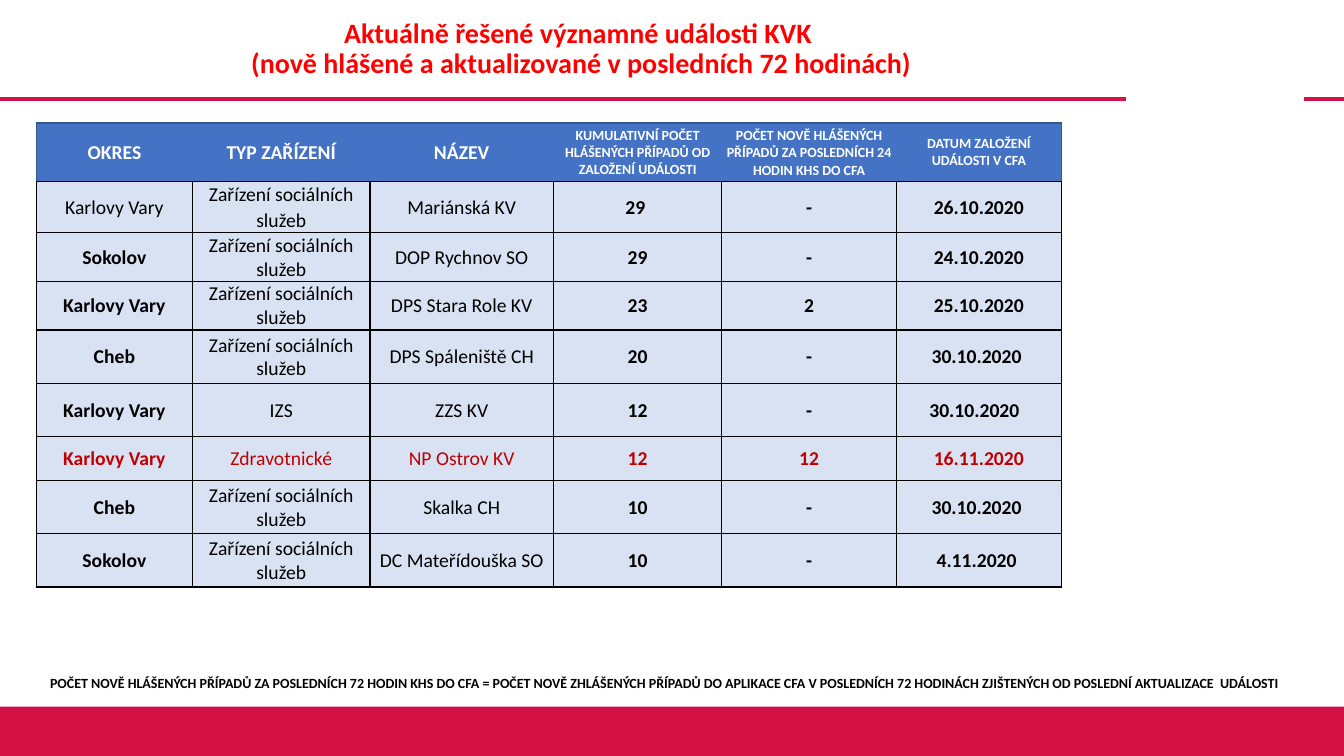
from dataclasses import dataclass

from lxml import etree
from pptx import Presentation
from pptx import util as u
from pptx.dml.color import RGBColor
from pptx.enum import shapes, text
from pptx.oxml.ns import qn

TITLE = ("Aktuálně řešené významné události KVK \v"
         "(nově hlášené a aktualizované v posledních 72 hodinách)")
FOOTNOTE = ("POČET NOVĚ HLÁŠENÝCH PŘÍPADŮ ZA POSLEDNÍCH 72 HODIN KHS DO CFA = "
            "POČET NOVĚ ZHLÁŠENÝCH PŘÍPADŮ DO APLIKACE CFA V POSLEDNÍCH 72 HODINÁCH "
            "ZJIŠTENÝCH OD POSLEDNÍ AKTUALIZACE  UDÁLOSTI")
HEADINGS = ("OKRES", "TYP ZAŘÍZENÍ", "NÁZEV",
            "KUMULATIVNÍ POČET HLÁŠENÝCH PŘÍPADŮ OD ZALOŽENÍ UDÁLOSTI",
            "POČET NOVĚ HLÁŠENÝCH PŘÍPADŮ ZA POSLEDNÍCH 24 HODIN KHS DO CFA",
            "DATUM ZALOŽENÍ UDÁLOSTI V CFA")
SOCIAL = "Zařízení sociálních služeb"
EVENTS = [
    ("Karlovy Vary", SOCIAL, "Mariánská KV", "29 ", "-", "26.10.2020"),
    ("Sokolov", SOCIAL, "DOP Rychnov SO", "29", "-", "24.10.2020"),
    ("Karlovy Vary", SOCIAL, "DPS Stara Role KV", "23", "2", "25.10.2020"),
    ("Cheb", SOCIAL, "DPS Spáleniště CH", "20", "-", "30.10.2020 "),
    ("Karlovy Vary", "IZS", "ZZS KV", "12", "-", "30.10.2020  "),
    ("Karlovy Vary", "Zdravotnické", "NP Ostrov KV", "12", "12", "16.11.2020"),
    ("Cheb", SOCIAL, "Skalka CH", "10", "-", "30.10.2020 "),
    ("Sokolov", SOCIAL, "DC Mateřídouška SO", "10", "-", "4.11.2020 "),
]
HIGHLIGHTED = "NP Ostrov KV"
COLUMN_WIDTHS = (1.55, 1.76, 1.82, 1.67, 1.73, 1.64)
ROW_HEIGHTS = (0.58, 0.43, 0.43, 0.43, 0.53, 0.53, 0.43, 0.53, 0.53)
RULES = ((0, 11.17), (12.93, 13.33))


@dataclass(frozen=True)
class Theme:
    font: str = "Calibri"
    band: str = "D31145"
    title: str = "FF0000"
    header: str = "4472C4"
    header_edge: str = "305983"
    body: str = "D9E2F3"
    ink: str = "000000"
    paper: str = "FFFFFF"
    highlight: str = "C00000"
    title_size: int = 20
    table_size: int = 14
    small_size: int = 10


THEME = Theme()


def write(frame, words, size, color, bold=True, spacing=1.0):
    """Fill a text frame with one centred, uniformly formatted paragraph."""
    frame.word_wrap = True
    frame.text = words
    paragraph = frame.paragraphs[0]
    paragraph.alignment = text.PP_ALIGN.CENTER
    paragraph.line_spacing = spacing
    for run in paragraph.runs:
        run.font.name = THEME.font
        run.font.size = u.Pt(size)
        run.font.bold = bold
        run.font.color.rgb = RGBColor.from_string(color)


def set_borders(cell, colors):
    """Draw 1 pt borders; colors maps L, R, T, B to a colour, missing ones are hidden."""
    properties = cell._tc.get_or_add_tcPr()
    for side in "LRTB":
        line = etree.SubElement(properties, qn(f"a:ln{side}"), w=str(u.Pt(1)))
        if side in colors:
            fill = etree.SubElement(line, qn("a:solidFill"))
            etree.SubElement(fill, qn("a:srgbClr"), val=colors[side])
        else:
            etree.SubElement(line, qn("a:noFill"))


def style_cell(cell, fill, borders, side_margin=0.01, top_margin=0.01):
    set_borders(cell, borders)
    cell.fill.solid()
    cell.fill.fore_color.rgb = RGBColor.from_string(fill)
    cell.vertical_anchor = text.MSO_ANCHOR.MIDDLE
    cell.margin_left = cell.margin_right = u.Inches(side_margin)
    cell.margin_top = u.Inches(top_margin)
    cell.margin_bottom = 0


def add_frame(slide):
    """Add the red rules under the title and the band at the bottom."""
    red = RGBColor.from_string(THEME.band)
    for start, end in RULES:
        rule = slide.shapes.add_connector(
            shapes.MSO_CONNECTOR.STRAIGHT,
            u.Inches(start), u.Inches(0.98), u.Inches(end), u.Inches(0.98))
        rule.line.color.rgb = red
        rule.line.width = u.Pt(3)
        etree.SubElement(rule._element.spPr, qn("a:effectLst"))
    band = slide.shapes.add_shape(shapes.MSO_SHAPE.RECTANGLE,
                                  0, u.Inches(7.01), u.Inches(13.33), u.Inches(0.49))
    band.shadow.inherit = False
    band.fill.solid()
    band.fill.fore_color.rgb = red
    band.line.fill.background()


def add_events(slide):
    table = slide.shapes.add_table(
        len(ROW_HEIGHTS), len(COLUMN_WIDTHS), u.Inches(0.36), u.Inches(1.22),
        u.Inches(sum(COLUMN_WIDTHS)), u.Inches(sum(ROW_HEIGHTS))).table
    for column, width in zip(table.columns, COLUMN_WIDTHS):
        column.width = u.Inches(width)
    for row, height in zip(table.rows, ROW_HEIGHTS):
        row.height = u.Inches(height)

    last = len(HEADINGS) - 1
    for c, heading in enumerate(HEADINGS):
        cell = table.cell(0, c)
        borders = {"T": THEME.header_edge, "B": THEME.ink}
        if c in (0, last):
            borders["L" if c == 0 else "R"] = THEME.header_edge
        style_cell(cell, THEME.header, borders)
        write(cell.text_frame, heading, THEME.table_size if c < 3 else THEME.small_size,
              THEME.paper, spacing=1.05 if c == 4 else 1.0)

    grid = dict.fromkeys("LRTB", THEME.ink)
    for r, event in enumerate(EVENTS, start=1):
        first = r == 1
        color = THEME.highlight if HIGHLIGHTED in event else THEME.ink
        margins = (0.07, 0) if first else (0.01, 0.01)
        for c, value in enumerate(event):
            cell = table.cell(r, c)
            style_cell(cell, THEME.body, grid, *margins)
            bold = c > 2 or (c == 0 and not first)
            write(cell.text_frame, value, THEME.table_size, color, bold,
                  1.07 if first else 1.0)


def add_text(slide, box, words, size, color, anchor, spacing):
    frame = slide.shapes.add_textbox(*map(u.Inches, box)).text_frame
    frame.vertical_anchor = anchor
    write(frame, words, size, color, spacing=spacing)


def main():
    deck = Presentation()
    deck.slide_width, deck.slide_height = u.Inches(13.33), u.Inches(7.5)
    slide = deck.slides.add_slide(deck.slide_layouts[6])
    add_frame(slide)
    add_events(slide)
    add_text(slide, (0.36, 0, 10.81, 0.98), TITLE, THEME.title_size, THEME.title,
             text.MSO_ANCHOR.MIDDLE, 0.9)
    add_text(slide, (0, 6.63, 13.17, 0.27), FOOTNOTE, THEME.small_size, THEME.ink,
             text.MSO_ANCHOR.TOP, 1.05)
    deck.save("out.pptx")


if __name__ == "__main__":
    main()
